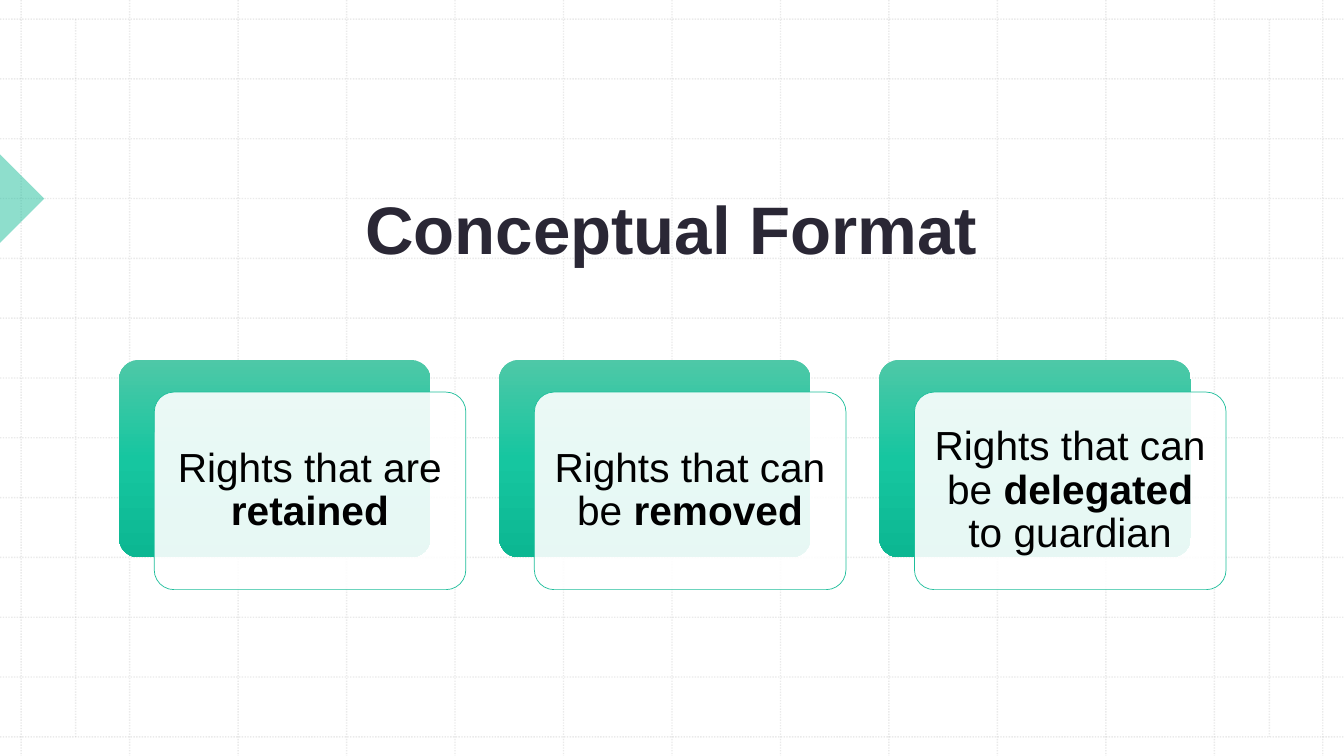
"""Build the Conceptual Format slide: three cards of rights over a dotted grid."""
from copy import deepcopy

from pptx import Presentation
from pptx import util as u
from pptx.dml.color import RGBColor
from pptx.enum import dml, shapes, text
from pptx.oxml.ns import qn
from lxml import etree

GRID = RGBColor(0xBC, 0xBC, 0xBC)
TEAL = RGBColor(0x1E, 0xBE, 0x9B)
INK = RGBColor(0x2A, 0x27, 0x35)
BLACK = RGBColor(0, 0, 0)
WHITE = RGBColor(0xFF, 0xFF, 0xFF)
CARD_STOPS = [
    (0, RGBColor(0x4E, 0xC8, 0xA7)),
    (0.5, RGBColor(0x16, 0xC6, 0xA0)),
    (1, RGBColor(0x0C, 0xB7, 0x92)),
]
WIDTH, HEIGHT = 13.33, 7.5
GRID_LEFT, GRID_RIGHT = 0.21, 13.12
GRID_TOP, GRID_BOTTOM = 0.19, 7.31
GRID_STEPS = 12
MARGIN_LINES = (0.75, 12.59)
CARD_LEFT, CARD_TOP, CARD_PITCH = 1.18, 3.57, 3.77
CARD_WIDTH, CARD_HEIGHT = 3.09, 1.96
SHIFT_X, SHIFT_Y = 0.35, 0.32
TEXT_GAP = 0.06
CARDS = [
    [("Rights that are ", False), ("retained", True)],
    [("Rights that can be ", False), ("removed", True)],
    [("Rights that can be ", False), ("delegated", True), (" to guardian", False)],
]


class SlideBuilder:
    font = "Arial"

    def __init__(self, slide):
        self.slide = slide

    def set_alpha(self, color_holder, percent):
        color = next(color_holder.iter(qn("a:srgbClr")))
        etree.SubElement(color, qn("a:alpha"), val=str(percent * 1000))

    def grid_line(self, x1, y1, x2, y2):
        line = self.slide.shapes.add_connector(
            shapes.MSO_CONNECTOR.STRAIGHT, *map(u.Inches, (x1, y1, x2, y2)))
        line.line.color.rgb = GRID
        line.line.width = u.Pt(1)
        line.line.dash_style = dml.MSO_LINE.ROUND_DOT
        properties = line._element.spPr
        self.set_alpha(properties, 30)
        etree.SubElement(properties, qn("a:effectLst"))

    def shape(self, kind, left, top, width, height):
        shape = self.slide.shapes.add_shape(
            kind, *map(u.Inches, (left, top, width, height)))
        shape.shadow.inherit = False
        shape.line.fill.background()
        return shape

    def tint(self, shape, color, percent):
        shape.fill.solid()
        shape.fill.fore_color.rgb = color
        self.set_alpha(shape._element.spPr.find(qn("a:solidFill")), percent)

    def rounded(self, left, top):
        card = self.shape(shapes.MSO_SHAPE.ROUNDED_RECTANGLE,
                          left, top, CARD_WIDTH, CARD_HEIGHT)
        card.adjustments[0] = 0.1
        return card

    def gradient(self, shape):
        shape.fill.gradient()
        shape.fill.gradient_angle = 270
        stop_list = next(shape._element.spPr.iter(qn("a:gsLst")))
        stop_list.insert(1, deepcopy(stop_list[0]))
        for stop, (position, color) in zip(shape.fill.gradient_stops, CARD_STOPS):
            stop.position = position
            stop.color.rgb = color

    def title(self, wording):
        title = self.slide.shapes.title
        title.left, title.top, title.width, title.height = map(
            u.Inches, (2.3, 1.2, 8.72, 2.28))
        self.slide.shapes._spTree.append(title._element)
        frame = title.text_frame
        frame.text = wording
        frame.auto_size = text.MSO_AUTO_SIZE.NONE
        frame.vertical_anchor = text.MSO_ANCHOR.BOTTOM
        frame.margin_bottom = u.Inches(0.82)
        self.style(frame.paragraphs[0], 48, INK)
        frame.paragraphs[0].font.bold = True

    def style(self, para, size, color):
        para.alignment = text.PP_ALIGN.CENTER
        para.font.name = self.font
        para.font.size = u.Pt(size)
        para.font.color.rgb = color

    def caption(self, left, top, width, height, spans):
        box = self.slide.shapes.add_textbox(
            *map(u.Inches, (left, top, width, height)))
        frame = box.text_frame
        frame.word_wrap = True
        frame.vertical_anchor = text.MSO_ANCHOR.MIDDLE
        frame.margin_left = frame.margin_right = u.Inches(0.12)
        frame.margin_top = frame.margin_bottom = u.Inches(0.12)
        para = frame.paragraphs[0]
        para.line_spacing = 0.9
        self.style(para, 29, BLACK)
        for wording, bold in spans:
            span = para.add_run()
            span.text = wording
            span.font.bold = bold

    def card(self, left, top, spans):
        self.gradient(self.rounded(left, top))
        left, top = left + SHIFT_X, top + SHIFT_Y
        front = self.rounded(left, top)
        self.tint(front, WHITE, 90)
        front.line.color.rgb = TEAL
        front.line.width = u.Pt(0.5)
        self.caption(left + TEXT_GAP, top + TEXT_GAP,
                     CARD_WIDTH - 2 * TEXT_GAP, CARD_HEIGHT - 2 * TEXT_GAP, spans)

    def backdrop(self):
        for step in range(GRID_STEPS + 1):
            x = GRID_LEFT + step * (GRID_RIGHT - GRID_LEFT) / GRID_STEPS
            y = GRID_TOP + step * (GRID_BOTTOM - GRID_TOP) / GRID_STEPS
            self.grid_line(x, 0, x, HEIGHT)
            self.grid_line(0, y, WIDTH, y)
        for x in MARGIN_LINES:
            self.grid_line(x, GRID_TOP, x, GRID_BOTTOM)
        marker = self.shape(shapes.MSO_SHAPE.RIGHT_TRIANGLE, -0.31, 1.66, 0.62, 0.62)
        marker.rotation = 225
        self.tint(marker, TEAL, 50)


def main():
    deck = Presentation()
    deck.slide_width, deck.slide_height = u.Inches(WIDTH), u.Inches(HEIGHT)
    page = SlideBuilder(deck.slides.add_slide(deck.slide_layouts[5]))
    page.backdrop()
    page.title("Conceptual Format")
    for index, spans in enumerate(CARDS):
        page.card(CARD_LEFT + index * CARD_PITCH, CARD_TOP, spans)
    deck.save("out.pptx")


if __name__ == "__main__":
    main()
